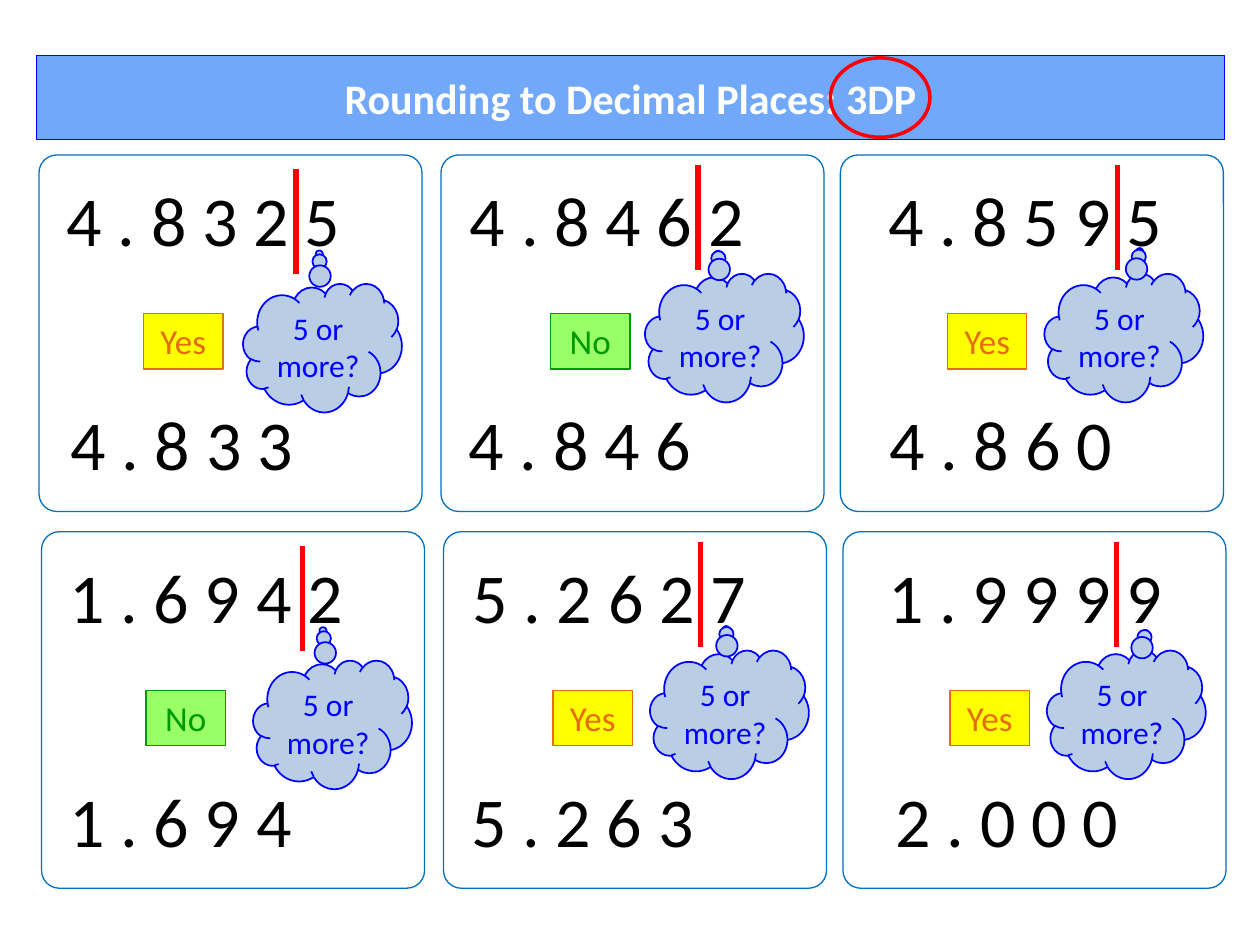
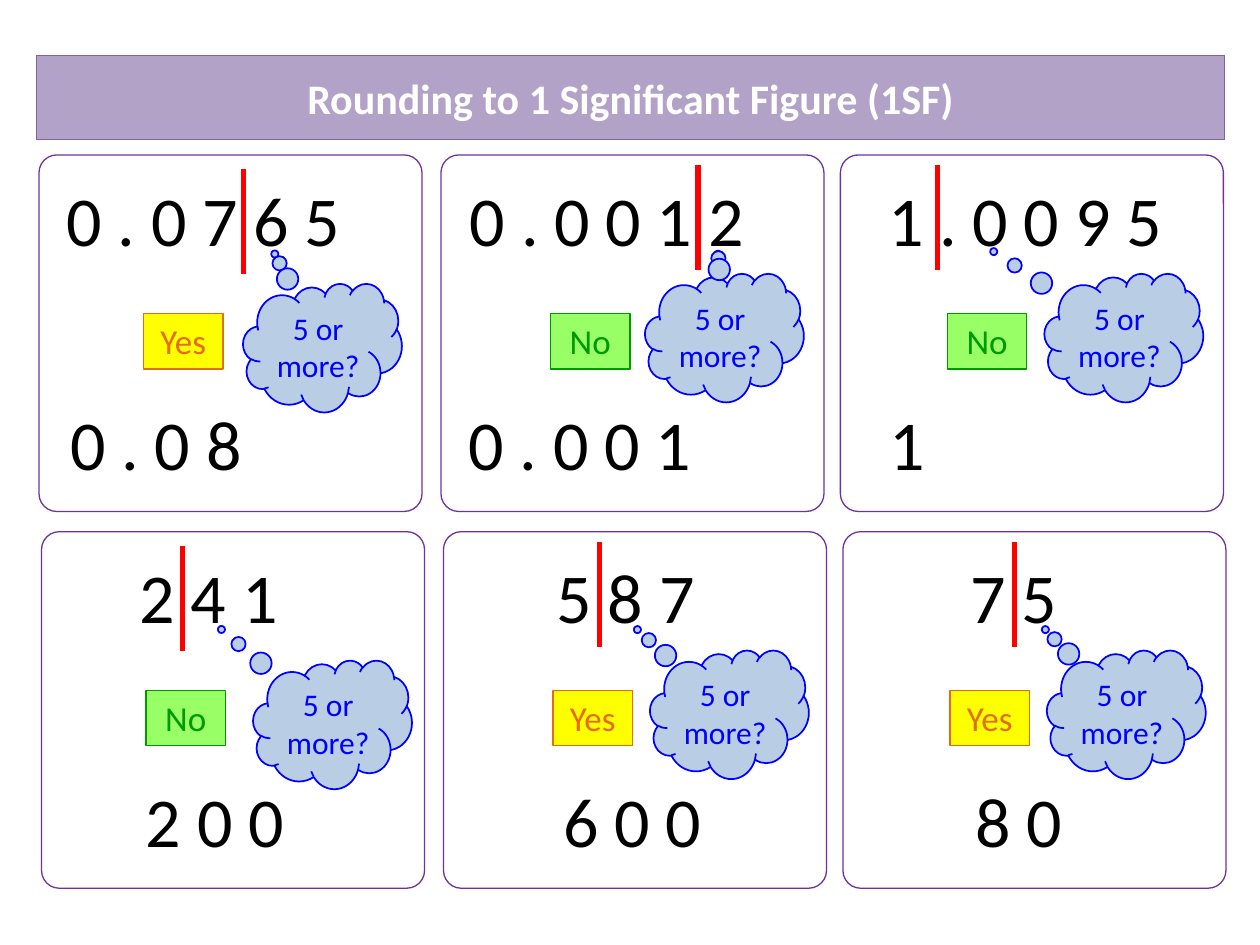
from dataclasses import dataclass

from lxml.etree import SubElement
from pptx import Presentation
from pptx.dml.color import RGBColor
from pptx.enum.shapes import MSO_CONNECTOR, MSO_SHAPE
from pptx.enum.text import MSO_ANCHOR, MSO_AUTO_SIZE, PP_ALIGN
from pptx.oxml import parse_xml
from pptx.oxml.ns import nsdecls, qn
from pptx.util import Inches, Pt

# Grid: 100 columns by 75 rows of square cells
WIDTH, HEIGHT = Inches(10), Inches(7.5)
CELL = WIDTH / 100
FONT = "Calibri"

HEX = {
    "white": "FFFFFF", "ink": "000000", "red": "FF0000",
    "blue": "0000FF", "band": "71A8F9", "edge": "0070C0",
    "lilac": "B3A2C7", "plum": "8064A2", "violet": "7030A0",
    "cloud": "B9CDE5", "lime": "99FF66", "green": "009900",
    "yellow": "FFFF00", "orange": "E46C0A",
}

# Card grid: the lower row sits slightly to the right
BAND = (2.9, 4.4, 94.3, 6.7)
LEFTS = (3.1, 35, 66.7)
TOP, STEP, SHIFT = 12.3, 29.9, 0.2
CARD_W, CARD_H = 30.4, 28.3

# Parts of a card, by column
CUT_TOP = (1.1, 0.8, 0.8)
CLOUD_TOP = (10.2, 9.4, 9.4)
VERDICT_X = (8.3, 8.7, 8.5)


@dataclass
class Sum:
    ask: str
    answer: str
    more: bool
    cut: float          # place of the red line in the card
    tip: tuple          # end of the thought bubbles
    ask_x: float
    ans_x: float
    cloud_x: float = 16.2


PLACES = [
    Sum("4 . 8 3 2 5", "4 . 8 3 3", True, 20.4, (-0.02, -0.73), 1.2, 1.5),
    Sum("4 . 8 4 6 2", "4 . 8 4 6", False, 20.4, (-0.04, -0.65), 1.3, 1.2),
    Sum("4 . 8 5 9 5", "4 . 8 6 0", True, 22, (0.1, -0.67), 2.8, 2.9),
    Sum("1 . 6 9 4 2", "1 . 6 9 4", False, 20.7, (-0.06, -0.73), 1.2, 1.2, 16.8),
    Sum("5 . 2 6 2 7", "5 . 2 6 3", True, 20.4, (-0.02, -0.66), 1.3, 1.2, 16.4),
    Sum("1 . 9 9 9 9", "2 . 0 0 0", True, 21.7, (0.12, -0.63), 2.6, 3.2),
]
FIGURES = [
    Sum("0 . 0 7 6 5", "0 . 0 8", True, 16.2, (-0.3, -0.73), 1.2, 1.5),
    Sum("0 . 0 0 1 2", "0 . 0 0 1", False, 20.4, (-0.04, -0.65), 1.3, 1.2),
    Sum("1 . 0 0 9 5", "1", False, 7.7, (-0.82, -0.67), 2.8, 2.9),
    Sum("2 4 1", "2 0 0", False, 11.2, (-0.7, -0.74), 6.8, 7.3, 16.8),
    Sum("5 8 7", "6 0 0", True, 12.4, (-0.58, -0.66), 8, 8.5, 16.4),
    Sum("7 5", "8 0", True, 13.6, (-0.51, -0.66), 9.1, 9.5),
]


def grid(*cells):
    return [round(n * CELL) for n in cells]


def tint(name):
    return RGBColor.from_string(HEX[name])


def paint(shape, fill, line, width):
    if fill:
        shape.fill.solid()
        shape.fill.fore_color.rgb = tint(fill)
    else:
        shape.fill.background()
    shape.line.color.rgb = tint(line)
    shape.line.width = Pt(width)


def draw(shapes, kind, box, fill, line, width=0.75):
    shape = shapes.add_shape(kind, *grid(*box))
    shape.shadow.inherit = False
    paint(shape, fill, line, width)
    return shape


def write(shape, text, size, color, align=PP_ALIGN.CENTER,
          anchor=MSO_ANCHOR.TOP, bold=False):
    frame = shape.text_frame
    frame.text = text
    frame.word_wrap = True
    frame.auto_size = MSO_AUTO_SIZE.NONE
    frame.vertical_anchor = anchor
    para = frame.paragraphs[0]
    para.alignment = align
    font = para.font
    font.name, font.size, font.bold = FONT, Pt(size), bold
    font.color.rgb = tint(color)


def label(shapes, box, text, size, color, align=PP_ALIGN.CENTER):
    write(shapes.add_textbox(*grid(*box)), text, size, color, align)


def heading(slide, text, fill, line):
    """Title placeholder shaped as a rounded band."""
    title = slide.shapes.title
    title.left, title.top, title.width, title.height = grid(*BAND)
    title.element.spPr.find(qn("a:xfrm")).addnext(parse_xml(
        f'<a:prstGeom {nsdecls("a")} prst="roundRect"><a:avLst>'
        '<a:gd name="adj" fmla="val 21000"/></a:avLst></a:prstGeom>'))
    paint(title, fill, line, 0.75)
    write(title, text, 24, "white", anchor=MSO_ANCHOR.MIDDLE, bold=True)


def think(slide, x, y, tip):
    """Thought cloud grouped with its question."""
    shapes = slide.shapes.add_group_shape().shapes
    cloud = draw(shapes, MSO_SHAPE.CLOUD_CALLOUT, (x, y, 12.6, 10.2),
                 "cloud", "blue", 1)
    cloud.adjustments[0], cloud.adjustments[1] = tip
    label(shapes, (x + 0.7, y + 1.5, 10.5, 7.1), "5 or more?", 18, "blue")


def card(slide, x, y, col, item, edge):
    shapes = slide.shapes
    frame = draw(shapes, MSO_SHAPE.ROUNDED_RECTANGLE,
                 (x, y, CARD_W, CARD_H), None, edge)
    frame.adjustments[0] = 0.05

    # Red line after the last digit kept
    cut, top = x + item.cut, y + CUT_TOP[col]
    bar = shapes.add_connector(MSO_CONNECTOR.STRAIGHT,
                               *grid(cut, top, cut, top + 8.35))
    bar.line.color.rgb = tint("red")
    bar.line.width = Pt(3)
    SubElement(bar.element.spPr, qn("a:effectLst"))

    # Number, verdict, thought and answer
    label(shapes, (x + item.ask_x, y + 1.2, 24.2, 7.7), item.ask, 40,
          "ink", PP_ALIGN.LEFT)
    word, fill, ink = (("Yes", "yellow", "orange") if item.more
                       else ("No", "lime", "green"))
    verdict = draw(shapes, MSO_SHAPE.RECTANGLE,
                   (x + VERDICT_X[col], y + 12.6, 6.3, 4.4), fill, ink)
    write(verdict, word, 20, ink)
    think(slide, x + item.cloud_x, y + CLOUD_TOP[col], item.tip)
    label(shapes, (x + item.ans_x, y + 19, 24.2, 7.7), item.answer, 40,
          "ink", PP_ALIGN.LEFT)


def board(deck, title, fill, line, edge, sums):
    """Slide with a title band and two rows of three cards."""
    slide = deck.slides.add_slide(deck.slide_layouts[5])
    heading(slide, title, fill, line)
    for i, item in enumerate(sums):
        row, col = divmod(i, len(LEFTS))
        card(slide, LEFTS[col] + row * SHIFT, TOP + row * STEP,
             col, item, edge)
    return slide


def main():
    deck = Presentation()
    deck.slide_width, deck.slide_height = WIDTH, HEIGHT
    first = board(deck, "Rounding to Decimal Places: 3DP",
                  "band", "blue", "edge", PLACES)
    # Ring around the number of places
    draw(first.shapes, MSO_SHAPE.OVAL, (65.9, 4.6, 7.9, 6.3), None, "red", 2)
    board(deck, "Rounding to 1 Significant Figure (1SF)",
          "lilac", "plum", "violet", FIGURES)
    deck.save("out.pptx")


if __name__ == "__main__":
    main()
